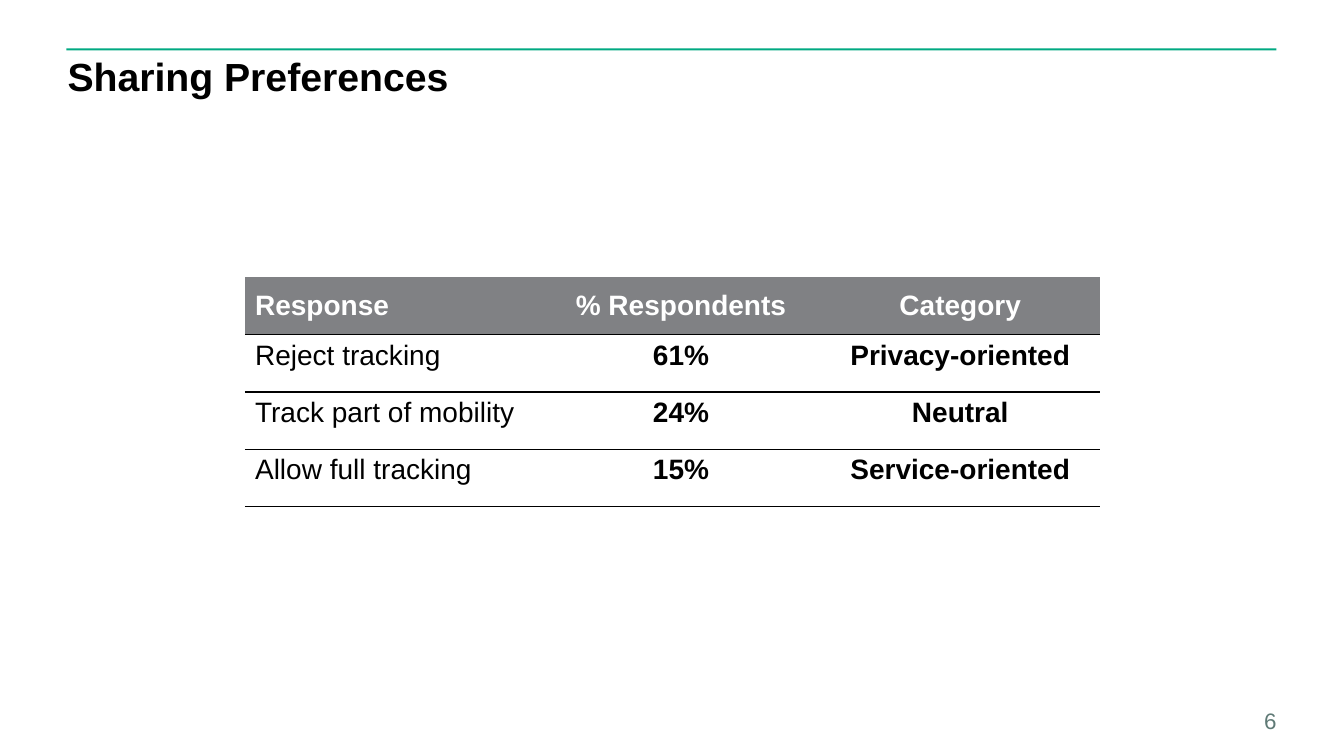
from lxml import etree
from pptx import Presentation
from pptx import util as u
from pptx.dml.color import RGBColor
from pptx.enum import shapes, text
from pptx.oxml.ns import qn

BLACK = RGBColor(0x00, 0x00, 0x00)
WHITE = RGBColor(0xFF, 0xFF, 0xFF)
GREEN = RGBColor(0x01, 0xA9, 0x82)
GREY = RGBColor(0x80, 0x81, 0x84)
SLATE = RGBColor(0x5F, 0x7A, 0x76)

ROWS = [
    ("Response", "% Respondents", "Category"),
    ("Reject tracking", "61%", "Privacy-oriented"),
    ("Track part of mobility", "24%", "Neutral"),
    ("Allow full tracking", "15%", "Service-oriented"),
]


class SlideBuilder:
    """Holds the text style and the current slide, and adds elements to it."""

    font = "Arial"

    def __init__(self, prs):
        self.s = prs.slides.add_slide(prs.slide_layouts[5])

    def add_text(self, tf, words, size, color, bold=False, align=text.PP_ALIGN.LEFT):
        p = tf.paragraphs[0]
        p.alignment = align
        r = p.add_run()
        r.text = words
        r.font.name = self.font
        r.font.size = u.Pt(size)
        r.font.bold = bold
        r.font.color.rgb = color
        return p

    def frame(self, sp, anchor):
        tf = sp.text_frame
        tf.margin_left = tf.margin_right = tf.margin_top = tf.margin_bottom = 0
        tf.vertical_anchor = anchor
        tf.auto_size = text.MSO_AUTO_SIZE.NONE
        return tf

    def bar(self, x, y, w, h, color):
        sp = self.s.shapes.add_shape(
            shapes.MSO_SHAPE.RECTANGLE, u.Inches(x), u.Inches(y), u.Inches(w), u.Inches(h))
        sp.shadow.inherit = False
        sp.fill.solid()
        sp.fill.fore_color.rgb = color
        sp.line.fill.background()

    def title(self, words, x, y, w, h):
        sp = self.s.shapes.title
        sp.left, sp.top, sp.width, sp.height = (u.Inches(v) for v in (x, y, w, h))
        tf = self.frame(sp, text.MSO_ANCHOR.TOP)
        tf.word_wrap = True
        self.add_text(tf, words, 28, BLACK, bold=True).line_spacing = 0.9

    def page_number(self, number, x, y, w, h):
        sp = self.s.shapes.add_textbox(u.Inches(x), u.Inches(y), u.Inches(w), u.Inches(h))
        tf = self.frame(sp, text.MSO_ANCHOR.BOTTOM)
        tf.word_wrap = False
        self.add_text(tf, str(number), 16, SLATE, align=text.PP_ALIGN.RIGHT)

    def borders(self, cell, ruled):
        tc_pr = cell._tc.get_or_add_tcPr()
        for i, side in enumerate(("lnL", "lnR", "lnT", "lnB")):
            ln = etree.Element(qn(f"a:{side}"), w=str(u.Pt(1)))
            if side in ruled:
                fill = etree.SubElement(ln, qn("a:solidFill"))
                etree.SubElement(fill, qn("a:srgbClr"), val=str(BLACK))
            else:
                etree.SubElement(ln, qn("a:noFill"))
            tc_pr.insert(i, ln)

    def table(self, rows, x, y, widths, row_height):
        table = self.s.shapes.add_table(
            len(rows), len(widths), u.Inches(x), u.Inches(y),
            u.Inches(sum(widths)), u.Inches(row_height * len(rows))).table
        table.horz_banding = False
        for column, width in zip(table.columns, widths):
            column.width = u.Inches(width)
        for i, row in enumerate(rows):
            header = i == 0
            for j, words in enumerate(row):
                cell = table.cell(i, j)
                cell.vertical_anchor = text.MSO_ANCHOR.MIDDLE if header else text.MSO_ANCHOR.TOP
                if header:
                    cell.fill.solid()
                    cell.fill.fore_color.rgb = GREY
                else:
                    cell.fill.background()
                self.borders(cell, ("lnB",) if header else ("lnT", "lnB"))
                self.add_text(cell.text_frame, words, 20, WHITE if header else BLACK,
                              bold=header or j > 0,
                              align=text.PP_ALIGN.CENTER if j else text.PP_ALIGN.LEFT)


def main():
    prs = Presentation()
    prs.slide_width, prs.slide_height = u.Inches(13.33), u.Inches(7.5)
    slide = SlideBuilder(prs)
    slide.bar(0.66, 0.48, 12, 0.02, GREEN)
    slide.title("Sharing Preferences", 0.67, 0.57, 12, 0.93)
    slide.table(ROWS, 2.43, 2.75, (2.94, 2.77, 2.77), 0.57)
    slide.page_number(6, 12.08, 7.03, 0.58, 0.25)
    prs.save("out.pptx")


if __name__ == "__main__":
    main()
